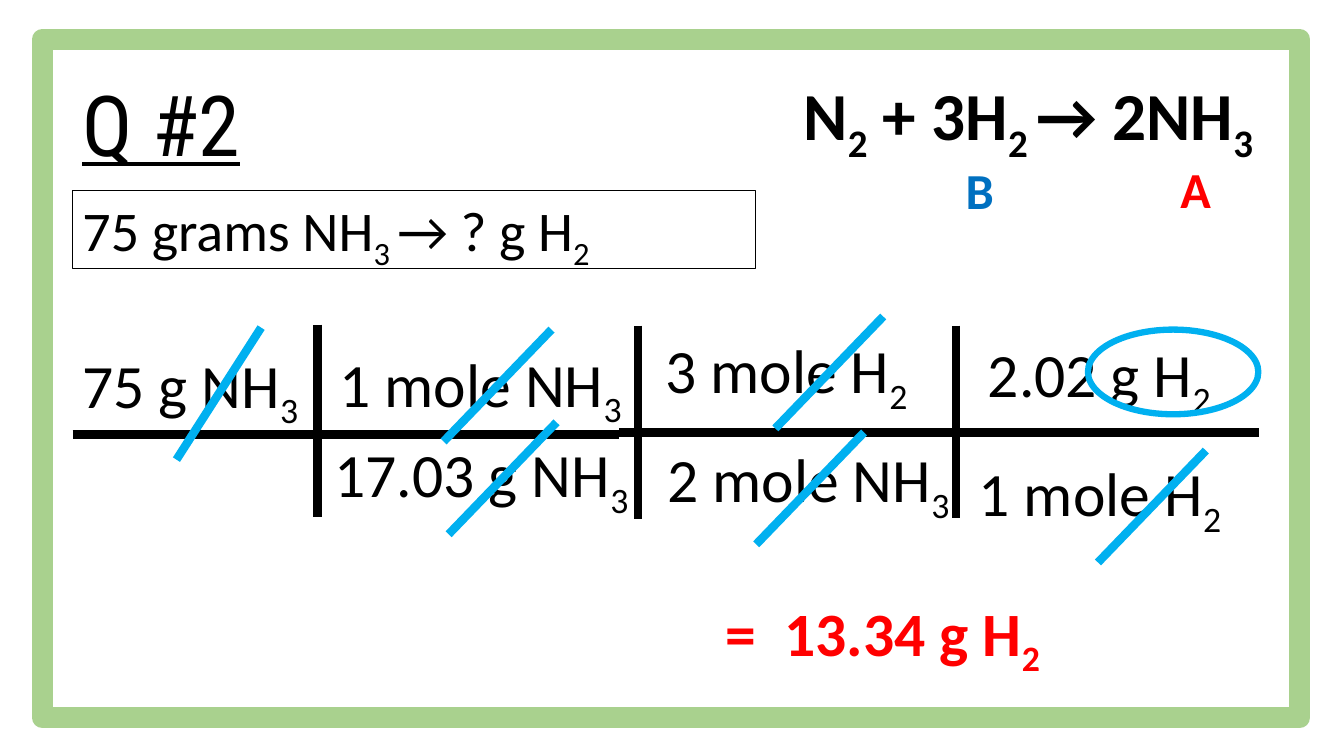
import pptx
import pptx.dml.color
import pptx.enum.shapes
import pptx.enum.text
import pptx.oxml
import pptx.util
from pptx.util import Inches

ANCHOR = pptx.enum.text.MSO_ANCHOR
ALIGN = pptx.enum.text.PP_ALIGN
SHAPE = pptx.enum.shapes.MSO_SHAPE

BLACK, WHITE, RED = "000000", "FFFFFF", "FF0000"
GREEN, BLUE, CYAN = "A9D18E", "0070C0", "00B0F0"

# Content: underscores enclose subscripts
TITLE = "Q #2"
EQUATION = "N_2_ + 3H_2 _→ 2NH_3_"
QUESTION = "75 grams NH_3 _→ ? g H_2_"
ANSWER = ["=", " 13.34 g H_2_"]
LABELS = [("A", 11.61, 1.52, RED), ("B", 9.48, 1.53, BLUE)]

# Conversion factors, left to right: text, left, top, width
FACTORS = [
    ("75 g NH_3_", 0.72, 3.47, 4.4),
    ("17.03 g NH_3_", 3.22, 4.36, 4.95),
    ("1 mole NH_3_", 3.27, 3.46, 4.09),
    ("2 mole NH_3_", 6.52, 4.41, 3.04),
    ("3 mole H_2_", 6.5, 3.33, 3.38),
    ("1 mole H_2_", 9.61, 4.55, 2.97),
    ("2.02 g H_2_", 9.7, 3.36, 2.97),
]
ROW_HEIGHT = 0.77

# Fraction bars: left, right, height on the slide
BARS = [(0.72, 6.14, 4.31), (6.14, 9.34, 4.29), (9.29, 12.49, 4.29)]
# Column dividers: position, top, bottom
DIVIDERS = [(3.15, 3.22, 5.13), (6.33, 3.23, 5.15), (9.48, 3.23, 5.14)]
# Strokes that cancel units: right end and top, all of one size
CANCELS = [(5.52, 4.19), (5.47, 3.27), (8.57, 4.29), (8.76, 3.14), (11.96, 4.47)]
CANCEL_WIDTH, CANCEL_HEIGHT = 1.07, 1.11

deck = pptx.Presentation()
deck.slide_width, deck.slide_height = Inches(13.33), Inches(7.5)
page = deck.slides.add_slide(deck.slide_layouts[6])


def color(value):
    return pptx.dml.color.RGBColor.from_string(value)


def add_box(left, top, width, height, fill=None, line=None, weight=1, kind=SHAPE.RECTANGLE):
    box = page.shapes.add_shape(kind, Inches(left), Inches(top), Inches(width), Inches(height))
    box.shadow.inherit = False
    if fill:
        box.fill.solid()
        box.fill.fore_color.rgb = color(fill)
    else:
        box.fill.background()
    if line:
        box.line.color.rgb = color(line)
        box.line.width = pptx.util.Pt(weight)
    else:
        box.line.fill.background()
    return box


def add_line(start, end, ink):
    line = page.shapes.add_connector(
        pptx.enum.shapes.MSO_CONNECTOR.STRAIGHT, *map(Inches, (*start, *end)))
    line.line.color.rgb = color(ink)
    line.line.width = pptx.util.Pt(6)
    line._element.spPr.append(pptx.oxml.parse_xml(
        '<a:effectLst xmlns:a="http://schemas.openxmlformats.org/drawingml/2006/main"/>'))


def write(box, text, size=44, ink=BLACK, font="Calibri", bold=False, underline=False,
          align=ALIGN.LEFT, anchor=ANCHOR.TOP, spacing=None):
    """Add text to the first paragraph and return its last span."""
    frame = box.text_frame
    frame.word_wrap = True
    frame.vertical_anchor = anchor
    para = frame.paragraphs[0]
    para.alignment = align
    para.line_spacing = spacing
    for index, piece in enumerate(text.split("_")):
        if not piece:
            continue
        span = para.add_run()
        span.text = piece
        span.font.size = pptx.util.Pt(size)
        span.font.name = font
        span.font.bold = bold
        span.font.underline = underline
        span.font.color.rgb = color(ink)
        if index % 2:
            span._r.get_or_add_rPr().set("baseline", "-25000")
    return span


# Frame and headings
add_box(0.42, 0.39, 12.47, 6.73, fill=WHITE, line=GREEN, weight=15)
write(add_box(0.72, 0.78, 5.4, 1), TITLE, size=60, font="Roboto Condensed",
      underline=True, spacing=0.9)
write(add_box(6.14, 0.68, 8.12, 0.91), EQUATION, size=48, bold=True, align=ALIGN.CENTER)
write(add_box(0.72, 1.89, 6.77, ROW_HEIGHT, line=BLACK, weight=0.75), QUESTION, size=40)
for letter, left, top, ink in LABELS:
    write(add_box(left, top, 0.98, 0.71), letter, size=36, ink=ink, bold=True)

# Conversion factors
for text, left, top, width in FACTORS:
    box = add_box(left, top, width, ROW_HEIGHT, fill=WHITE, line=WHITE)
    write(box, text, anchor=ANCHOR.MIDDLE)

# Answer, with a wide gap after the equals sign
answer_box = add_box(7.1, 5.93, 5.48, ROW_HEIGHT, fill=WHITE, line=WHITE)
for piece in ANSWER:
    span = write(answer_box, piece, ink=RED, bold=True, anchor=ANCHOR.MIDDLE)
    if piece == "=":
        span._r.get_or_add_rPr().set("spc", "1000")

# Grid of the calculation
for left, right, height in BARS:
    add_line((left, height), (right, height), BLACK)
for position, top, bottom in DIVIDERS:
    add_line((position, top), (position, bottom), BLACK)

# Cancelled units and the unit that remains
add_line((2.59, 3.25), (1.75, 4.56), CYAN)
for right, top in CANCELS:
    add_line((right, top), (right - CANCEL_WIDTH, top + CANCEL_HEIGHT), CYAN)
add_box(10.79, 3.27, 1.69, 0.84, line=CYAN, weight=4.5, kind=SHAPE.OVAL)

deck.save("out.pptx")
